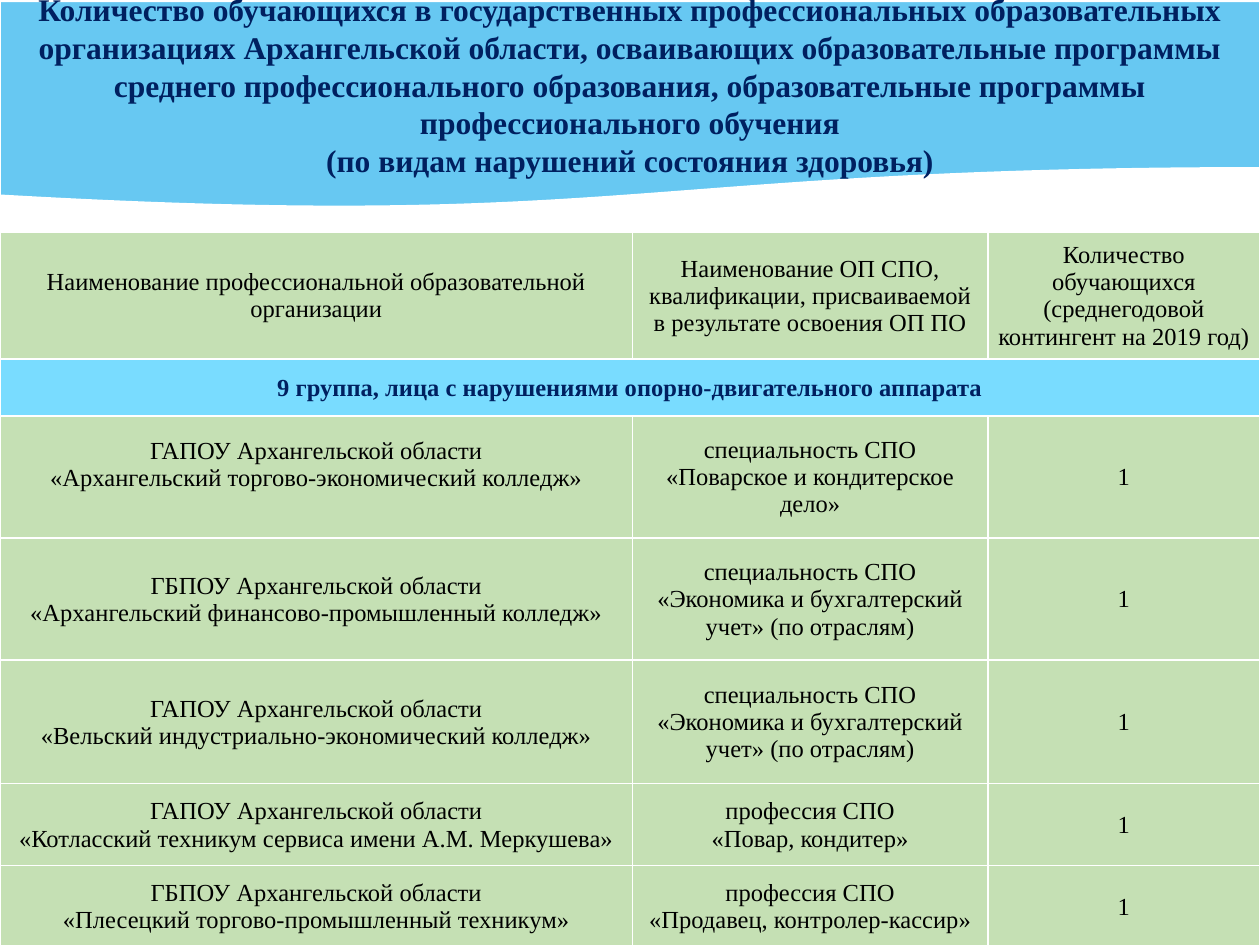
from dataclasses import dataclass

from lxml.etree import SubElement
from pptx import Presentation
from pptx.dml.color import RGBColor
from pptx.enum.shapes import MSO_SHAPE as Shape
from pptx.enum.text import MSO_ANCHOR as Anchor, PP_ALIGN as Align
from pptx.oxml.ns import qn
from pptx.table import Table, _Cell as Cell
from pptx.text.text import TextFrame as Frame
from pptx.util import Inches, Pt

FONT = "Times New Roman"
NAVY, BLACK, WHITE = "002060", "000000", "FFFFFF"
GREEN, SKY, BLUE = "C5E0B4", "79DCFF", "67C8F2"
WIDTHS = (5.02, 2.82, 2.16)


@dataclass
class Row:
    height: float
    texts: tuple[str, ...]
    fill: str = GREEN
    color: str = BLACK
    bold: bool = False
    lift: float = 0


def study(height: float, kind: str, school: str, course: str, lift: float = 0) -> Row:
    name = f"{kind} Архангельской области\n«{school}»"
    return Row(height, (name, course, "1"), lift=lift)


ROWS = (
    Row(1.01, (
        "Наименование профессиональной образовательной организации",
        "Наименование ОП СПО, квалификации, присваиваемой\nв результате освоения ОП ПО",
        "Количество обучающихся (среднегодовой контингент на 2019 год)",
    )),
    Row(0.45, ("9 группа, лица с нарушениями опорно-двигательного аппарата",),
        fill=SKY, color=NAVY, bold=True),
    study(0.97, "ГАПОУ", "Архангельский торгово-экономический колледж",
          "специальность СПО\n«Поварское и кондитерское дело»", lift=0.21),
    study(0.97, "ГБПОУ", "Архангельский финансово-промышленный колледж",
          "специальность СПО\n«Экономика и бухгалтерский учет» (по отраслям)"),
    study(0.98, "ГАПОУ", "Вельский индустриально-экономический колледж",
          "специальность СПО\n«Экономика и бухгалтерский учет» (по отраслям)"),
    study(0.65, "ГАПОУ", "Котласский техникум сервиса имени А.М. Меркушева",
          "профессия СПО\n«Повар, кондитер»"),
    study(0.65, "ГБПОУ", "Плесецкий торгово-промышленный техникум",
          "профессия СПО\n«Продавец, контролер-кассир»"),
)

TITLE = (
    "Количество обучающихся в государственных профессиональных образовательных "
    "организациях Архангельской области, осваивающих образовательные программы "
    "среднего профессионального образования, образовательные программы "
    "профессионального обучения\n(по видам нарушений состояния здоровья)"
)


def tint(code: str) -> RGBColor:
    return RGBColor.from_string(code)


def write(frame: Frame, text: str, *, size: float = 14,
          color: str = BLACK, bold: bool = False) -> None:
    frame.text = text
    frame.word_wrap = True
    for para in frame.paragraphs:
        para.alignment = Align.CENTER
        for run in para.runs:
            font = run.font
            font.name, font.size, font.bold = FONT, Pt(size), bold
            font.color.rgb = tint(color)


def edge(cell: Cell) -> None:
    props = cell._tc.get_or_add_tcPr()
    for side in ("a:lnL", "a:lnR", "a:lnT", "a:lnB"):
        line = SubElement(props, qn(side), w=str(Pt(1)))
        fill = SubElement(line, qn("a:solidFill"))
        SubElement(fill, qn("a:srgbClr"), val=WHITE)


def fill_row(table: Table, index: int, row: Row) -> None:
    table.rows[index].height = Inches(row.height)
    for col in range(len(WIDTHS)):
        cell = table.cell(index, col)
        edge(cell)
        cell.fill.solid()
        cell.fill.fore_color.rgb = tint(row.fill)
        cell.vertical_anchor = Anchor.MIDDLE
        cell.margin_left = cell.margin_right = cell.margin_top = Inches(0.01)
        cell.margin_bottom = Inches(0)
    if len(row.texts) == 1:
        table.cell(index, 0).merge(table.cell(index, len(WIDTHS) - 1))
    for col, text in enumerate(row.texts):
        write(table.cell(index, col).text_frame, text, color=row.color, bold=row.bold)
    table.cell(index, 0).margin_bottom = Inches(row.lift)


def main() -> None:
    deck = Presentation()
    deck.slide_width, deck.slide_height = Inches(10), Inches(7.5)
    slide = deck.slides.add_slide(deck.slide_layouts[6])

    high = sum(row.height for row in ROWS)
    table = slide.shapes.add_table(
        len(ROWS), len(WIDTHS), Inches(0), Inches(1.84), Inches(10), Inches(high)
    ).table
    for col, width in zip(table.columns, WIDTHS):
        col.width = Inches(width)
    for index, row in enumerate(ROWS):
        fill_row(table, index, row)

    banner = slide.shapes.add_shape(
        Shape.FLOWCHART_DOCUMENT, Inches(0), Inches(0.01), Inches(10), Inches(1.65)
    )
    banner.shadow.inherit = False
    banner.fill.solid()
    banner.fill.fore_color.rgb = tint(BLUE)
    banner.line.color.rgb = tint(WHITE)
    banner.line.width = Pt(1)
    banner.text_frame.vertical_anchor = Anchor.MIDDLE
    write(banner.text_frame, TITLE, size=18, color=NAVY, bold=True)

    deck.save("out.pptx")


if __name__ == "__main__":
    main()
